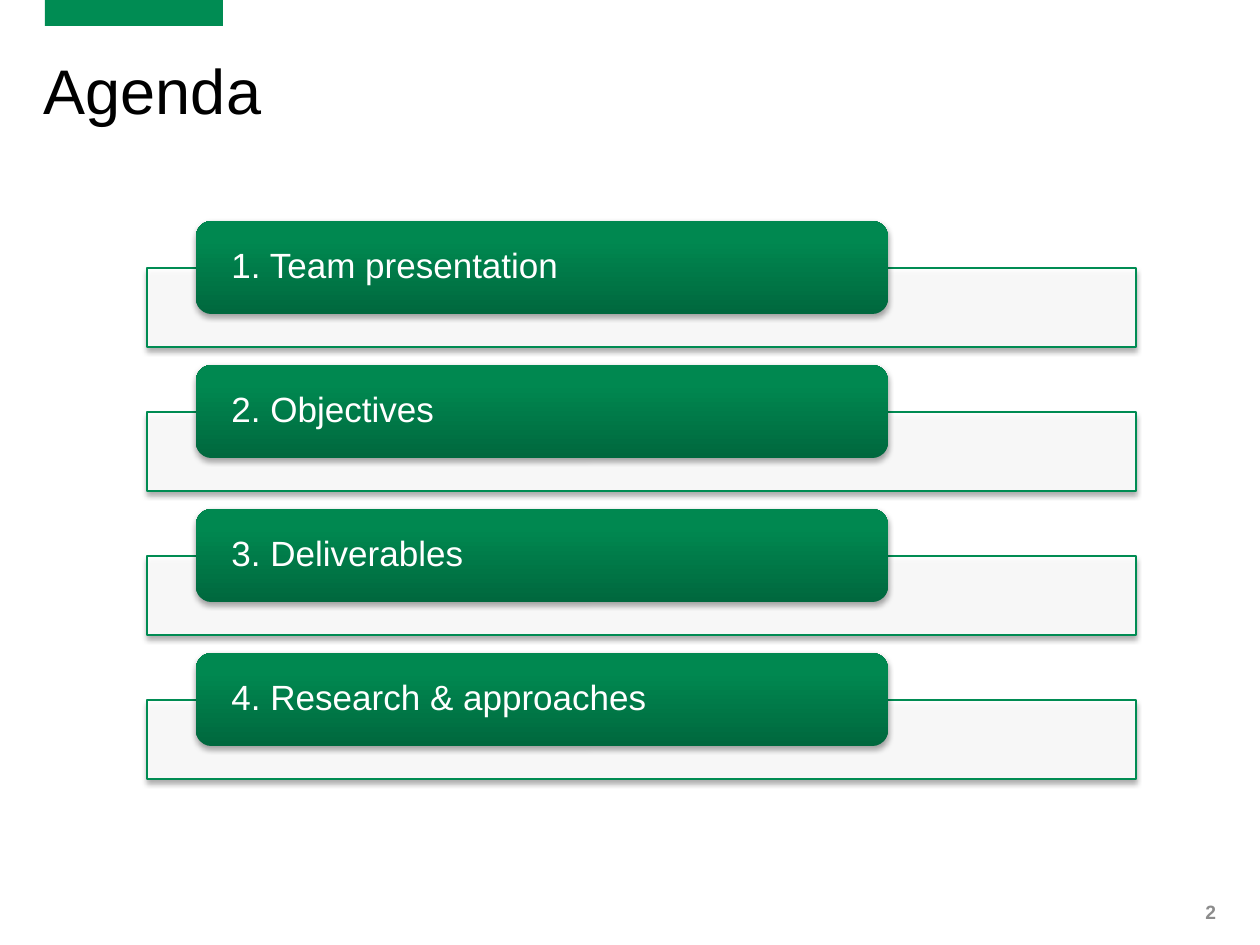
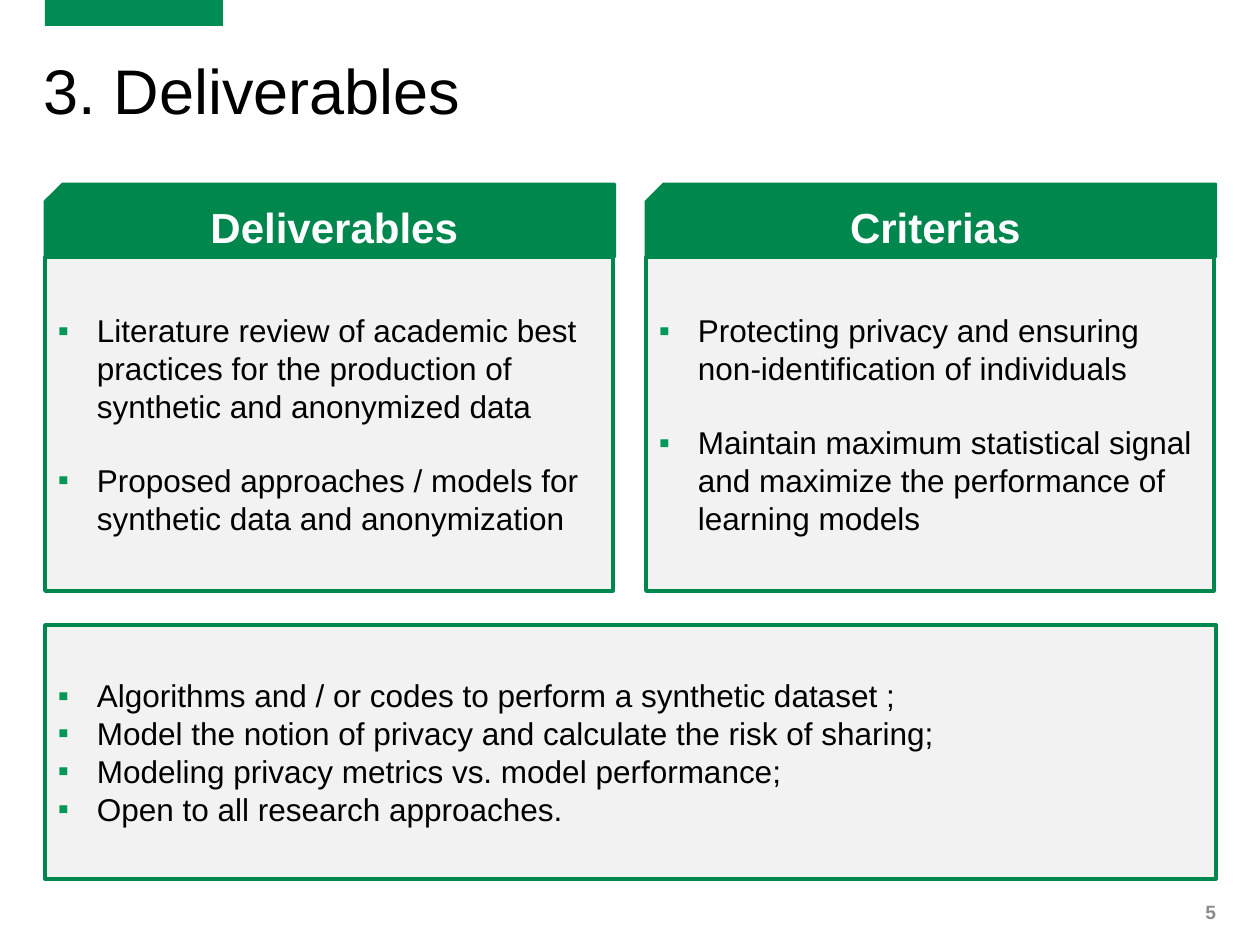
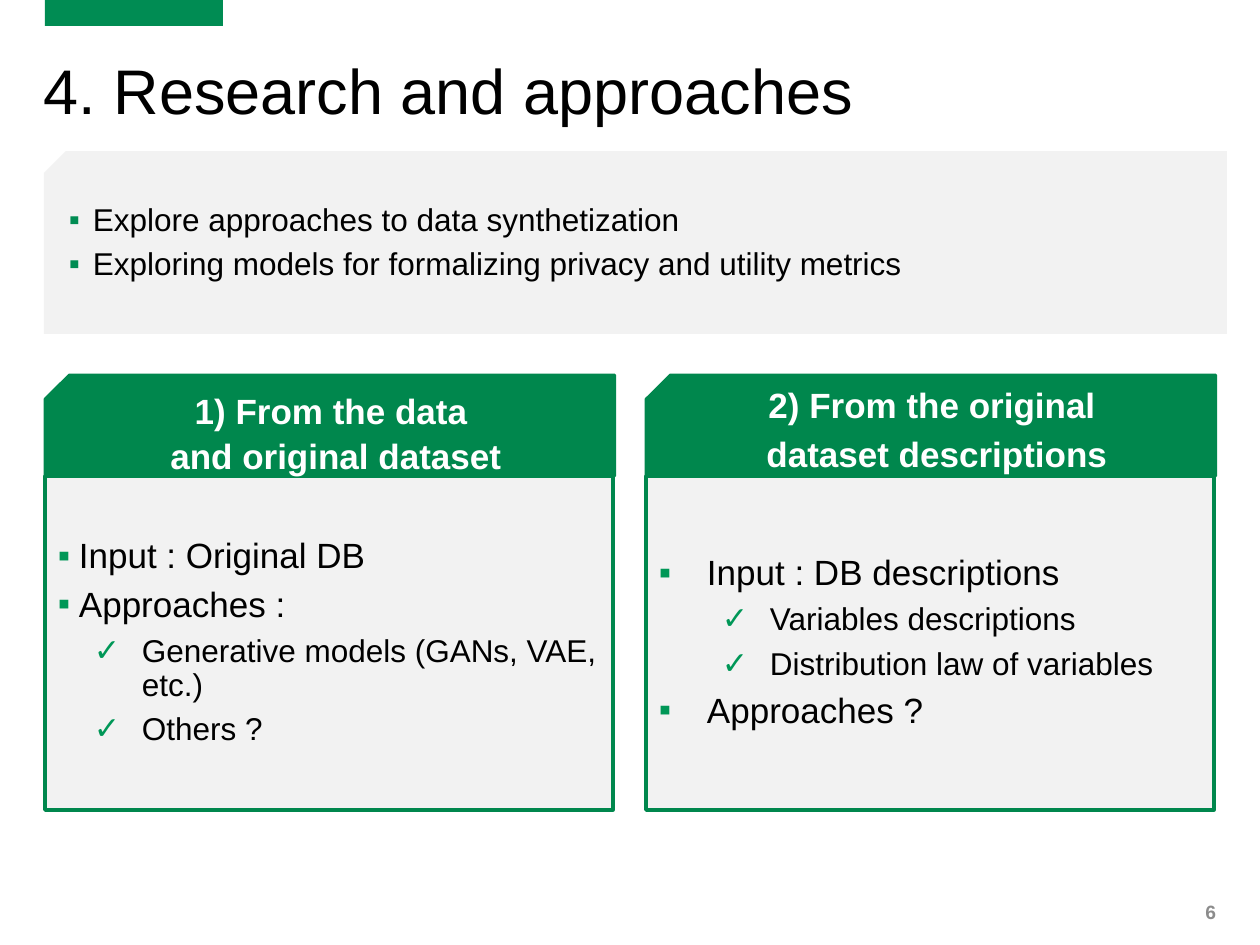
from lxml import etree
from pptx import Presentation
from pptx.dml.color import RGBColor
from pptx.enum.shapes import MSO_SHAPE
from pptx.enum.text import MSO_ANCHOR, PP_ALIGN
from pptx.oxml.ns import qn
from pptx.util import Emu, Pt

RECT = MSO_SHAPE.RECTANGLE
ROUNDED = MSO_SHAPE.ROUNDED_RECTANGLE
SNIPPED = MSO_SHAPE.SNIP_1_RECTANGLE
TOP, MIDDLE = MSO_ANCHOR.TOP, MSO_ANCHOR.MIDDLE
CENTER, RIGHT = PP_ALIGN.CENTER, PP_ALIGN.RIGHT

EMU_PER_PX = 914400 / 126
SLIDE_W, SLIDE_H = 1260, 945
FONT = "Arial"
BRAND, GREEN, BULLET_GREEN = "008C53", "00874D", "009757"
WHITE, BLACK, PALE, GREY = "FFFFFF", "000000", "F2F2F2", "8C8C8C"
LABEL_GRADIENT = [(0, "00683E"), (80, "008850"), (100, "008851")]

COLUMN_LEFTS = (45, 646)
COLUMN_W = 570
COLUMN_BODY_H = 334
DEFAULT_INSETS = (13, 6, 13, 6)
HEADER_INSETS = (13, 13, 13, 13)
NO_INSETS = (0, 0, 0, 0)

TITLE = {"font": {"size": Pt(36)}, "paragraph": {"line_spacing": 0.8}}
PAGE_NUMBER = {"font": {"size": Pt(11), "bold": True}, "color": GREY,
               "paragraph": {"alignment": RIGHT}}
AGENDA_LABEL = {"font": {"size": Pt(20)}, "color": WHITE,
                "paragraph": {"line_spacing": 0.9}}
HEADER_WIDE = {"alignment": CENTER, "line_spacing": 1.06}
HEADER_TIGHT = {"alignment": CENTER, "line_spacing": 0.9, "space_before": Pt(6)}


def header_style(size, paragraph=HEADER_WIDE):
    return {"font": {"size": Pt(size), "bold": True}, "color": WHITE,
            "paragraph": paragraph}


def bullet_style(size, margin, hanging, mark="▪", color=BULLET_GREEN, **paragraph):
    return {"font": {"size": Pt(size)}, "paragraph": paragraph,
            "bullet": (mark, margin, hanging, color)}


SPACED = {"line_spacing": 0.9, "space_before": Pt(6)}
POINT = bullet_style(18, 39, 39)
POINT_AFTER_GAP = bullet_style(18, 39, 39, space_before=Pt(20.7))
INTRO_FIRST = bullet_style(18, 24, 24, color=BRAND, line_spacing=0.9)
INTRO_NEXT = bullet_style(18, 24, 24, color=BRAND, **SPACED)
DATA_POINT = bullet_style(20, 21, 48, **SPACED)
DATA_CHECK = bullet_style(18, 84, 48, "✓", **SPACED)
DESCRIPTION_POINT = bullet_style(20, 48, 48, **SPACED)
DESCRIPTION_CHECK = bullet_style(18, 111, 48, "✓", **SPACED)


def px(length):
    return Emu(round(length * EMU_PER_PX))


def rgb(color):
    return RGBColor.from_string(color)


def add_xml(parent, tag, **attributes):
    return etree.SubElement(parent, qn(tag),
                            {key: str(value) for key, value in attributes.items()})


def set_values(target, values):
    for name, value in values.items():
        setattr(target, name, value)


def add_bullet(paragraph, mark, margin, hanging, color):
    properties = paragraph._p.get_or_add_pPr()
    properties.set("marL", str(px(margin)))
    properties.set("indent", str(-px(hanging)))
    add_xml(add_xml(properties, "a:buClr"), "a:srgbClr", val=color)
    add_xml(properties, "a:buFont", typeface=FONT)
    add_xml(properties, "a:buChar", char=mark)


def write(shape, lines, insets=DEFAULT_INSETS, anchor=MIDDLE):
    """Fill a shape with lines, each a pair of text and style."""
    frame = shape.text_frame
    sides = ("margin_left", "margin_top", "margin_right", "margin_bottom")
    set_values(frame, dict(zip(sides, map(px, insets))))
    set_values(frame, {"word_wrap": True, "vertical_anchor": anchor})
    for index, (text, style) in enumerate(lines):
        paragraph = frame.paragraphs[0] if index == 0 else frame.add_paragraph()
        set_values(paragraph, {"alignment": PP_ALIGN.LEFT, **style["paragraph"]})
        if "bullet" in style:
            add_bullet(paragraph, *style["bullet"])
        run = paragraph.add_run()
        run.text = text
        set_values(run.font, {"name": FONT, **style["font"]})
        run.font.color.rgb = rgb(style.get("color", BLACK))


def add_text(slide, box, lines, anchor=TOP):
    write(slide.shapes.add_textbox(*map(px, box)), lines, NO_INSETS, anchor)


def add_block(slide, kind, box, fill, line=None, line_width=1):
    block = slide.shapes.add_shape(kind, *map(px, box))
    block.shadow.inherit = False
    block.fill.solid()
    block.fill.fore_color.rgb = rgb(fill)
    if line:
        block.line.color.rgb = rgb(line)
        block.line.width = Pt(line_width)
    else:
        block.line.fill.background()
    return block


def add_snipped(slide, box, fill, snip, **outline):
    """Add a rectangle with its top left corner cut off."""
    block = add_block(slide, SNIPPED, box, fill, **outline)
    block.adjustments[0] = snip
    block._element.spPr.get_or_add_xfrm().set("flipH", "1")
    return block


def cast_shadow(shape):
    effects = shape._element.spPr.find(qn("a:effectLst"))
    shadow = add_xml(effects, "a:outerShdw", blurRad=Pt(3.1), dist=Pt(1.8),
                     dir=5400000, rotWithShape=0)
    add_xml(add_xml(shadow, "a:srgbClr", val=BLACK), "a:alpha", val=35000)


def shade_upwards(shape, stops):
    shape.fill.gradient()
    shape.fill.gradient_angle = 90
    stop_list = shape._element.spPr.find(qn("a:gradFill")).find(qn("a:gsLst"))
    for old_stop in list(stop_list):
        stop_list.remove(old_stop)
    for percent, color in stops:
        stop = add_xml(stop_list, "a:gs", pos=percent * 1000)
        add_xml(stop, "a:srgbClr", val=color)


def add_base_slide(deck, title, number):
    slide = deck.slides.add_slide(deck.slide_layouts[6])
    add_block(slide, RECT, (45, 0, 178, 26), BRAND)
    add_text(slide, (44, 66, 1171, 100), [(title, TITLE)])
    add_text(slide, (1137, 879, 79, 66), [(str(number), PAGE_NUMBER)], MIDDLE)
    return slide


def add_agenda_row(slide, left, top, topic):
    panel = add_block(slide, RECT, (left, top + 47, 989, 79), WHITE, BRAND, 0.75)
    panel_color = panel._element.spPr.find(qn("a:solidFill"))[0]
    add_xml(panel_color, "a:alpha", val=90000)
    label = add_block(slide, ROUNDED, (left + 49, top, 692, 93), BRAND)
    shade_upwards(label, LABEL_GRADIENT)
    for part in (panel, label):
        cast_shadow(part)
    write(label, [(topic, AGENDA_LABEL)], (31, 0, 31, 0))


def add_panel(slide, box, points):
    write(add_block(slide, RECT, box, PALE, GREEN, 2), points)


def add_column(slide, left, top, header_h, heading, points):
    """Add a green header with a framed list below it."""
    add_panel(slide, (left, top + header_h, COLUMN_W - 2, COLUMN_BODY_H), points)
    header = add_snipped(slide, (left, top, COLUMN_W, header_h), GREEN, 0.24,
                         line=GREEN, line_width=1.5)
    write(header, heading, HEADER_INSETS)


def build_agenda(deck):
    slide = add_base_slide(deck, "Agenda", 2)
    topics = ("Team presentation", "Objectives", "Deliverables",
              "Research & approaches")
    for index, topic in enumerate(topics):
        add_agenda_row(slide, 147, 221 + 144 * index, f"{index + 1}. {topic}")


def build_deliverables(deck):
    slide = add_base_slide(deck, "3. Deliverables", 5)
    columns = (
        ("Deliverables",
         "Literature review of academic best practices for the production of "
         "synthetic and anonymized data",
         "Proposed approaches / models for synthetic data and anonymization"),
        ("Criterias",
         "Protecting privacy and ensuring non-identification of individuals",
         "Maintain maximum statistical signal and maximize the performance of "
         "learning models"),
    )
    for left, (heading, first, second) in zip(COLUMN_LEFTS, columns):
        add_column(slide, left, 184, 73, [(heading, header_style(24))],
                   [(first, POINT), (second, POINT_AFTER_GAP)])
    tasks = ("Algorithms and / or codes to perform a synthetic dataset ;",
             "Model the notion of privacy and calculate the risk of sharing;",
             "Modeling privacy metrics vs. model performance;",
             "Open to all research approaches.")
    add_panel(slide, (45, 625, 1171, 254), [(task, POINT) for task in tasks])


def build_research(deck):
    slide = add_base_slide(deck, "4. Research and approaches", 6)
    add_snipped(slide, (44, 151, 1183, 183), PALE, 0.12)
    add_text(slide, (69, 204, 1171, 110), [
        ("Explore approaches to data synthetization", INTRO_FIRST),
        ("Exploring models for formalizing privacy and utility metrics", INTRO_NEXT),
    ])
    columns = (
        (HEADER_WIDE, ("1) From the data\N{NO-BREAK SPACE}", "and original dataset"), [
            ("Input : Original DB", DATA_POINT),
            ("Approaches :", DATA_POINT),
            ("Generative models (GANs, VAE, etc.)", DATA_CHECK),
            ("Others ?", DATA_CHECK),
        ]),
        (HEADER_TIGHT, ("2) From the original ", "dataset descriptions"), [
            ("Input : DB descriptions", DESCRIPTION_POINT),
            ("Variables descriptions", DESCRIPTION_CHECK),
            ("Distribution law of variables", DESCRIPTION_CHECK),
            ("Approaches ?", DESCRIPTION_POINT),
        ]),
    )
    for left, (spacing, heading, points) in zip(COLUMN_LEFTS, columns):
        style = header_style(20, spacing)
        add_column(slide, left, 375, 101, [(line, style) for line in heading], points)


def main():
    deck = Presentation()
    deck.slide_width, deck.slide_height = px(SLIDE_W), px(SLIDE_H)
    for build in (build_agenda, build_deliverables, build_research):
        build(deck)
    deck.save("out.pptx")


if __name__ == "__main__":
    main()
